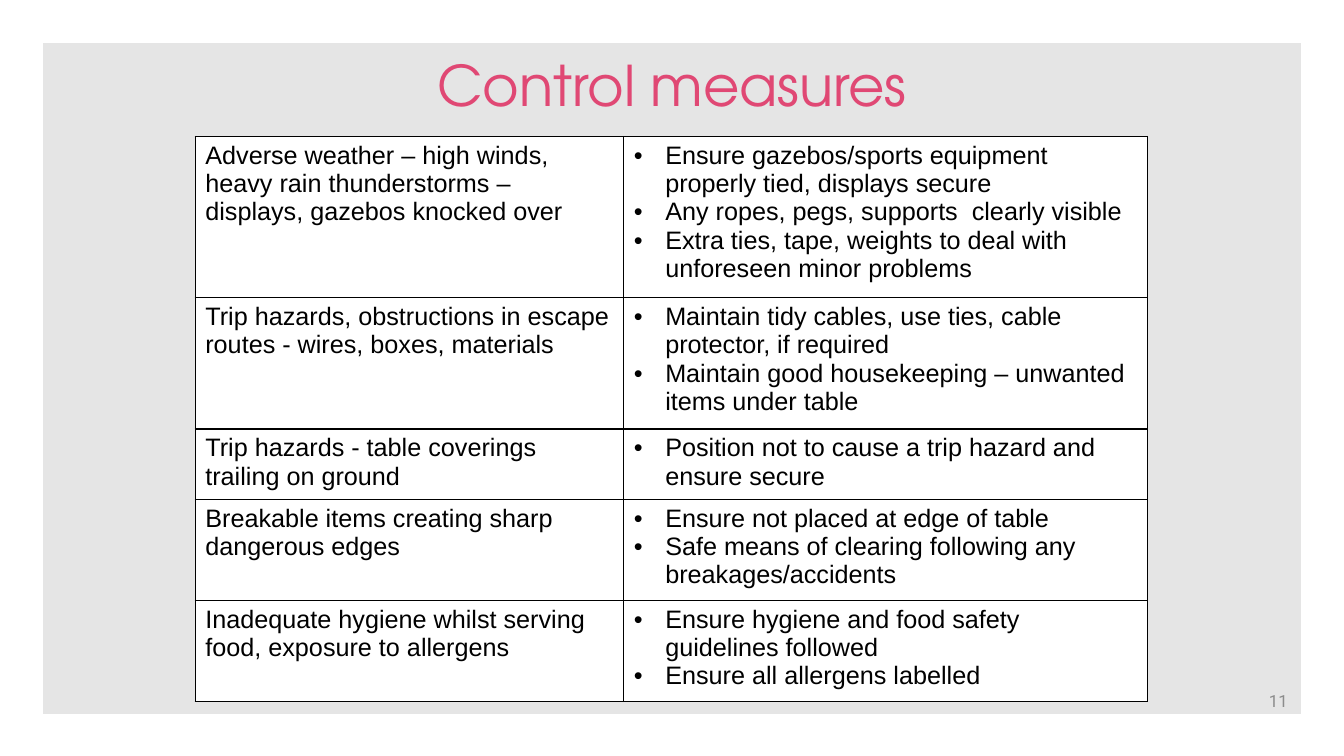
import dataclasses
import typing

import lxml.etree
import pptx
import pptx.dml.color
import pptx.enum.shapes
import pptx.enum.text
import pptx.oxml.ns
import pptx.util

RGBColor = pptx.dml.color.RGBColor
ALIGN = pptx.enum.text.PP_ALIGN
MIDDLE = pptx.enum.text.MSO_ANCHOR.MIDDLE

EMU_PER_PX = 9525
BLACK = RGBColor(0x00, 0x00, 0x00)
WHITE = RGBColor(0xFF, 0xFF, 0xFF)
PINK = RGBColor(0xE0, 0x48, 0x74)
GREY = RGBColor(0x8C, 0x8C, 0x8C)

COLUMN_WIDTHS = (408, 499)
BULLET_INDENT = 30


@dataclasses.dataclass(frozen=True)
class Label:
    text: str
    area: tuple[int, int, int, int]
    font: str
    size: int
    color: RGBColor
    format: dict[str, typing.Any]


@dataclasses.dataclass(frozen=True)
class Hazard:
    risk: str
    controls: tuple[str, ...]
    height: int


LABELS = (
    Label("11", (948, 648, 288, 38), "Roboto", 12, GREY, {"alignment": ALIGN.RIGHT}),
    Label("Control measures", (88, 15, 1104, 139), "TeX Gyre Adventor", 40, PINK,
          {"alignment": ALIGN.CENTER, "line_spacing": 0.9}),
)

HAZARDS = (
    Hazard("Adverse weather – high winds, heavy rain thunderstorms – displays, gazebos knocked over",
           ("Ensure gazebos/sports equipment properly tied, displays secure",
            "Any ropes, pegs, supports  clearly visible",
            "Extra ties, tape, weights to deal with unforeseen minor problems"), 122),
    Hazard("Trip hazards, obstructions in escape routes - wires, boxes, materials",
           ("Maintain tidy cables, use ties, cable protector, if required",
            "Maintain good housekeeping – unwanted items under table"), 99),
    Hazard("Trip hazards - table coverings trailing on ground",
           ("Position not to cause a trip hazard and ensure secure",), 54),
    Hazard("Breakable items creating sharp dangerous edges",
           ("Ensure not placed at edge of table",
            "Safe means of clearing following any breakages/accidents"), 76),
    Hazard("Inadequate hygiene whilst serving food, exposure to allergens",
           ("Ensure hygiene and food safety guidelines followed",
            "Ensure all allergens labelled"), 76),
)


def px(length: int) -> pptx.util.Emu:
    return pptx.util.Emu(length * EMU_PER_PX)


def apply(target: typing.Any, values: dict[str, typing.Any]) -> None:
    for name, value in values.items():
        setattr(target, name, value)


def add_child(parent: typing.Any, tag: str, **attributes: str) -> typing.Any:
    return lxml.etree.SubElement(parent, pptx.oxml.ns.qn(tag), attributes)


def write(para: typing.Any, text: str, font: str, size: int, color: RGBColor) -> None:
    span = para.add_run()
    span.text = text
    apply(span.font, {"name": font, "size": pptx.util.Pt(size)})
    span.font.color.rgb = color


def draw_panel(page: typing.Any) -> None:
    panel = page.shapes.add_shape(
        pptx.enum.shapes.MSO_SHAPE.RECTANGLE, px(34), px(34), px(1212), px(653))
    panel.shadow.inherit = False
    panel.fill.solid()
    panel.fill.fore_color.rgb = BLACK
    fill_color = panel.fill._xPr.find(".//" + pptx.oxml.ns.qn("a:srgbClr"))
    add_child(fill_color, "a:alpha", val="10000")
    panel.line.color.rgb = WHITE
    panel.line.width = pptx.util.Pt(10)


def draw_label(page: typing.Any, label: Label) -> None:
    box = page.shapes.add_textbox(*map(px, label.area))
    apply(box.text_frame, {"word_wrap": True, "vertical_anchor": MIDDLE})
    para = box.text_frame.paragraphs[0]
    apply(para, label.format)
    write(para, label.text, label.font, label.size, label.color)


def add_bullet(para: typing.Any) -> None:
    properties = para._p.get_or_add_pPr()
    properties.set("marL", str(px(BULLET_INDENT)))
    properties.set("indent", str(px(-BULLET_INDENT)))
    add_child(properties, "a:buFont", typeface="Arial")
    add_child(properties, "a:buChar", char="•")


def fill_cell(cell: typing.Any, texts: tuple[str, ...], bulleted: bool) -> None:
    properties = cell._tc.get_or_add_tcPr()
    for side in ("a:lnL", "a:lnR", "a:lnT", "a:lnB"):
        border = add_child(properties, side, w=str(pptx.util.Pt(1)))
        add_child(add_child(border, "a:solidFill"), "a:srgbClr", val=str(BLACK))
    cell.fill.solid()
    cell.fill.fore_color.rgb = WHITE
    frame = cell.text_frame
    for index, text in enumerate(texts):
        para = frame.add_paragraph() if index else frame.paragraphs[0]
        if bulleted:
            add_bullet(para)
        write(para, text, "Arial", 18, BLACK)


def draw_table(page: typing.Any) -> None:
    table = page.shapes.add_table(
        len(HAZARDS), len(COLUMN_WIDTHS), px(186), px(130),
        px(sum(COLUMN_WIDTHS)), px(538)).table
    apply(table, {"first_row": False, "horz_banding": False})
    for column, width in zip(table.columns, COLUMN_WIDTHS):
        column.width = px(width)
    for row, hazard in zip(table.rows, HAZARDS):
        row.height = px(hazard.height)
        fill_cell(row.cells[0], (hazard.risk,), False)
        fill_cell(row.cells[1], hazard.controls, True)


def main() -> None:
    deck = pptx.Presentation()
    apply(deck, {"slide_width": px(1280), "slide_height": px(720)})
    page = deck.slides.add_slide(deck.slide_layouts[6])
    draw_panel(page)
    number, title = LABELS
    draw_label(page, number)
    draw_table(page)
    draw_label(page, title)
    deck.save("out.pptx")


if __name__ == "__main__":
    main()
